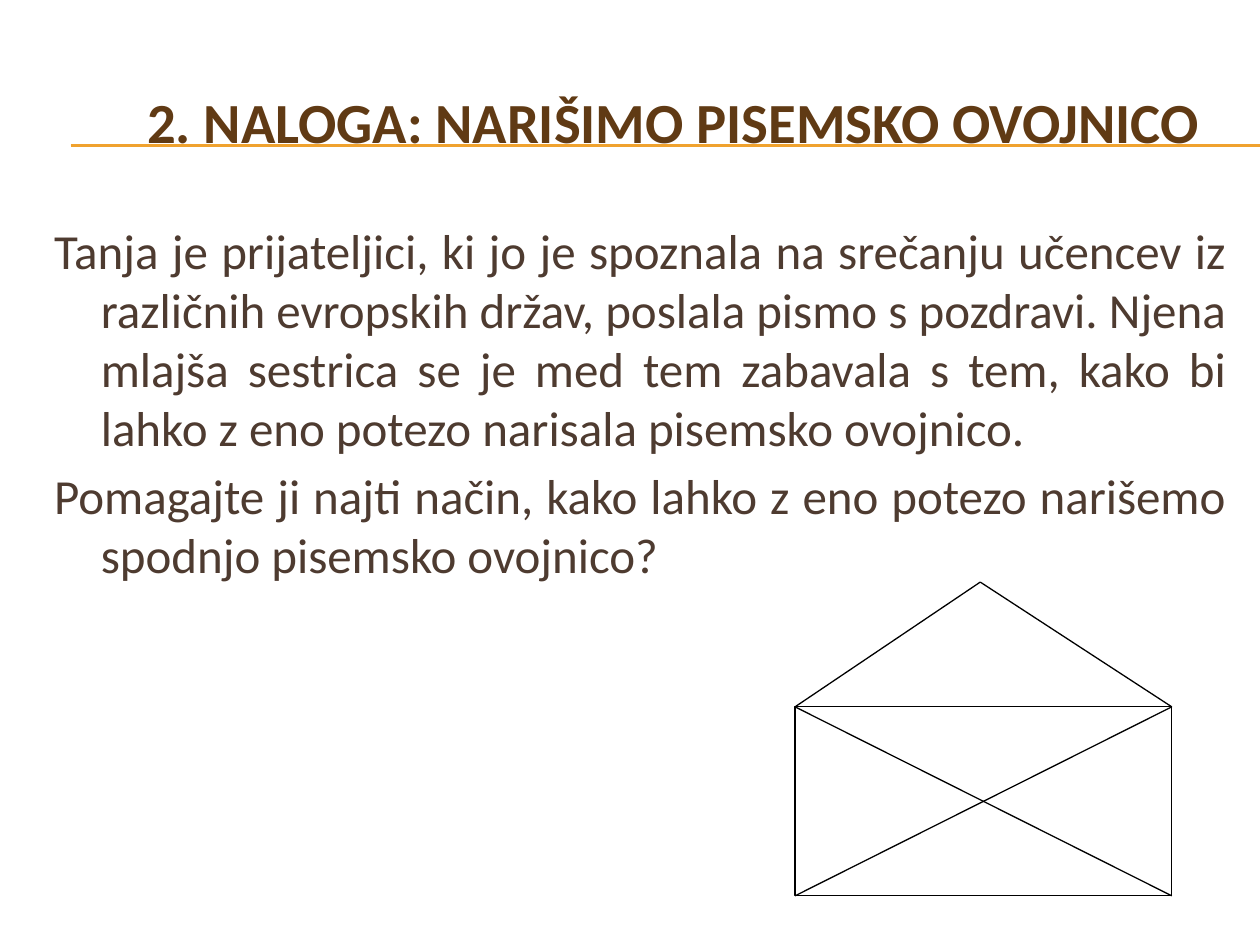
import lxml.etree
import pptx
import pptx.dml.color
import pptx.enum.shapes
import pptx.enum.text
import pptx.oxml.ns
import pptx.util
from pptx.util import Inches

RGBColor = pptx.dml.color.RGBColor
PP_ALIGN = pptx.enum.text.PP_ALIGN
ANCHOR = pptx.enum.text.MSO_ANCHOR
qn = pptx.oxml.ns.qn

TITLE_BROWN = RGBColor(0x60, 0x3A, 0x14)
BODY_BROWN = RGBColor(0x4E, 0x3B, 0x30)
GOLD = RGBColor(0xF0, 0xA2, 0x2E)
BLACK = RGBColor(0, 0, 0)
WHITE = RGBColor(0xFF, 0xFF, 0xFF)

TITLE = "2. NALOGA: NARIŠIMO PISEMSKO OVOJNICO"
TASK = [
    "Tanja je prijateljici, ki jo je spoznala na srečanju učencev iz različnih "
    "evropskih držav, poslala pismo s pozdravi. Njena mlajša sestrica se je med "
    "tem zabavala s tem, kako bi lahko z eno potezo narisala pisemsko ovojnico.",
    "Pomagajte ji najti način, kako lahko z eno potezo narišemo spodnjo "
    "pisemsko ovojnico?",
]


def place(placeholder, left, top, width, height, anchor):
    placeholder.left, placeholder.top = Inches(left), Inches(top)
    placeholder.width, placeholder.height = Inches(width), Inches(height)
    frame = placeholder.text_frame
    frame.word_wrap = True
    frame.auto_size = pptx.enum.text.MSO_AUTO_SIZE.NONE
    frame.vertical_anchor = anchor
    return frame


def write(paragraph, text, size, color, align, margin, indent, bold=False):
    paragraph.alignment = align
    properties = paragraph._p.get_or_add_pPr()
    properties.set("marL", str(Inches(margin)))
    properties.set("indent", str(Inches(indent)))
    lxml.etree.SubElement(properties, qn("a:buNone"))
    run = paragraph.add_run()
    run.text = text
    run.font.name = "Calibri"
    run.font.size = pptx.util.Pt(size)
    run.font.bold = bold
    run.font.color.rgb = color


def add_line(shapes, start, end, color):
    line = shapes.add_connector(
        pptx.enum.shapes.MSO_CONNECTOR.STRAIGHT,
        *(Inches(value) for value in (*start, *end)))
    line.line.color.rgb = color
    line.line.width = pptx.util.Pt(0.75)
    lxml.etree.SubElement(line.element.spPr, qn("a:effectLst"))
    return line


def add_title(slide):
    title = slide.shapes.title
    frame = place(title, 0.33, 0.5, 9.5, 0.92, ANCHOR.MIDDLE)
    write(frame.paragraphs[0], TITLE, 32.4, TITLE_BROWN, PP_ALIGN.CENTER,
          0.53, 0, bold=True)
    for y in (1.15, 1.16):
        rule = add_line(slide.shapes, (0.56, y), (10, y), GOLD)
        title.element.addprevious(rule.element)  # rules lie behind the title


def add_task(slide):
    frame = place(slide.placeholders[1], 0.33, 1.7, 9.5, 4.95, ANCHOR.TOP)
    for index, text in enumerate(TASK):
        paragraph = frame.add_paragraph() if index else frame.paragraphs[0]
        write(paragraph, text, 28, BODY_BROWN, PP_ALIGN.JUSTIFY, 0.37, -0.37)


def add_envelope(slide, left=6.31, top=5.61, width=2.99, height=1.5):
    envelope = slide.shapes.add_group_shape().shapes
    front = envelope.add_shape(
        pptx.enum.shapes.MSO_SHAPE.RECTANGLE,
        Inches(left), Inches(top), Inches(width), Inches(height))
    front.shadow.inherit = False
    front.fill.solid()
    front.fill.fore_color.rgb = WHITE
    front.line.color.rgb = BLACK
    front.line.width = pptx.util.Pt(0.75)

    right, bottom = left + width, top + height
    top_left, top_right, flap_tip = (left, top), (right, top), (7.78, 4.62)
    for start, end in (
        (top_left, flap_tip),
        (flap_tip, top_right),
        (top_left, (right, bottom)),
        (top_right, (left, bottom)),
    ):
        add_line(envelope, start, end, BLACK)


def main():
    presentation = pptx.Presentation()
    presentation.slide_width = Inches(10)
    presentation.slide_height = Inches(7.5)
    slide = presentation.slides.add_slide(presentation.slide_layouts[1])
    add_title(slide)
    add_task(slide)
    add_envelope(slide)
    presentation.save("out.pptx")


if __name__ == "__main__":
    main()
